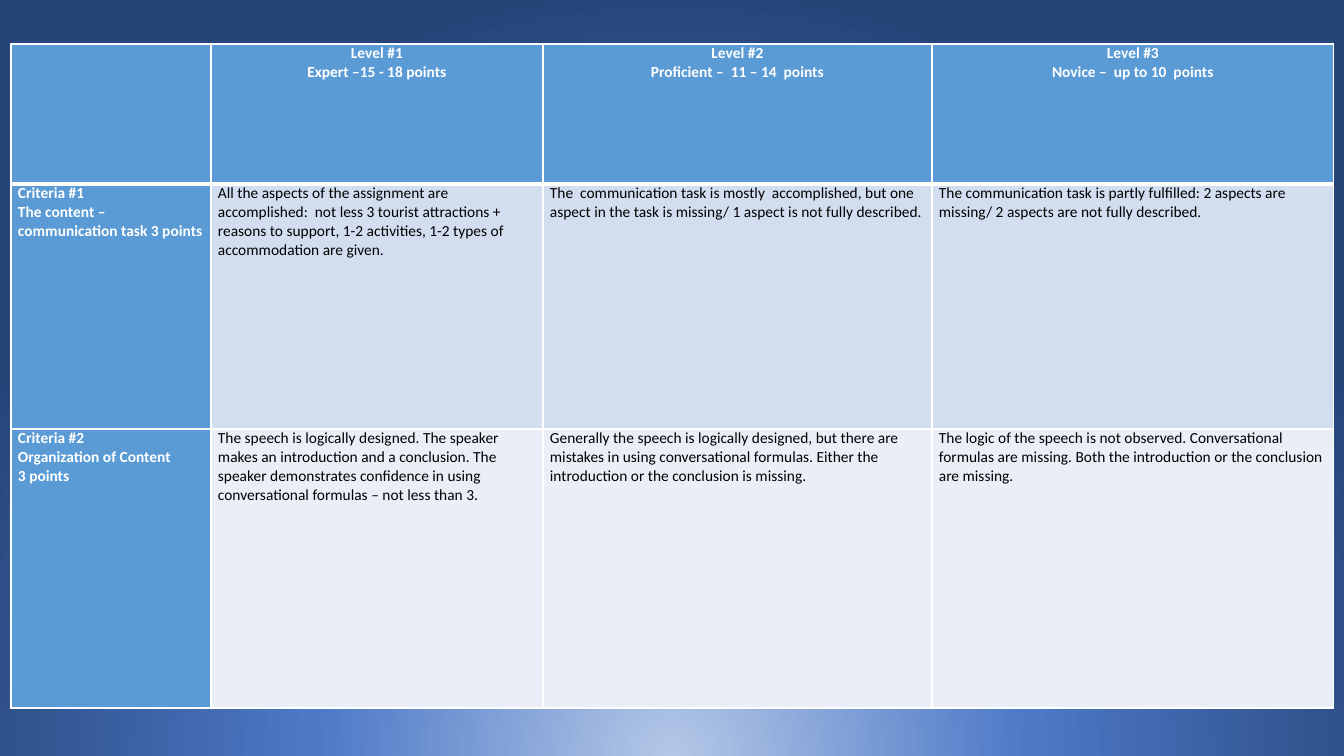
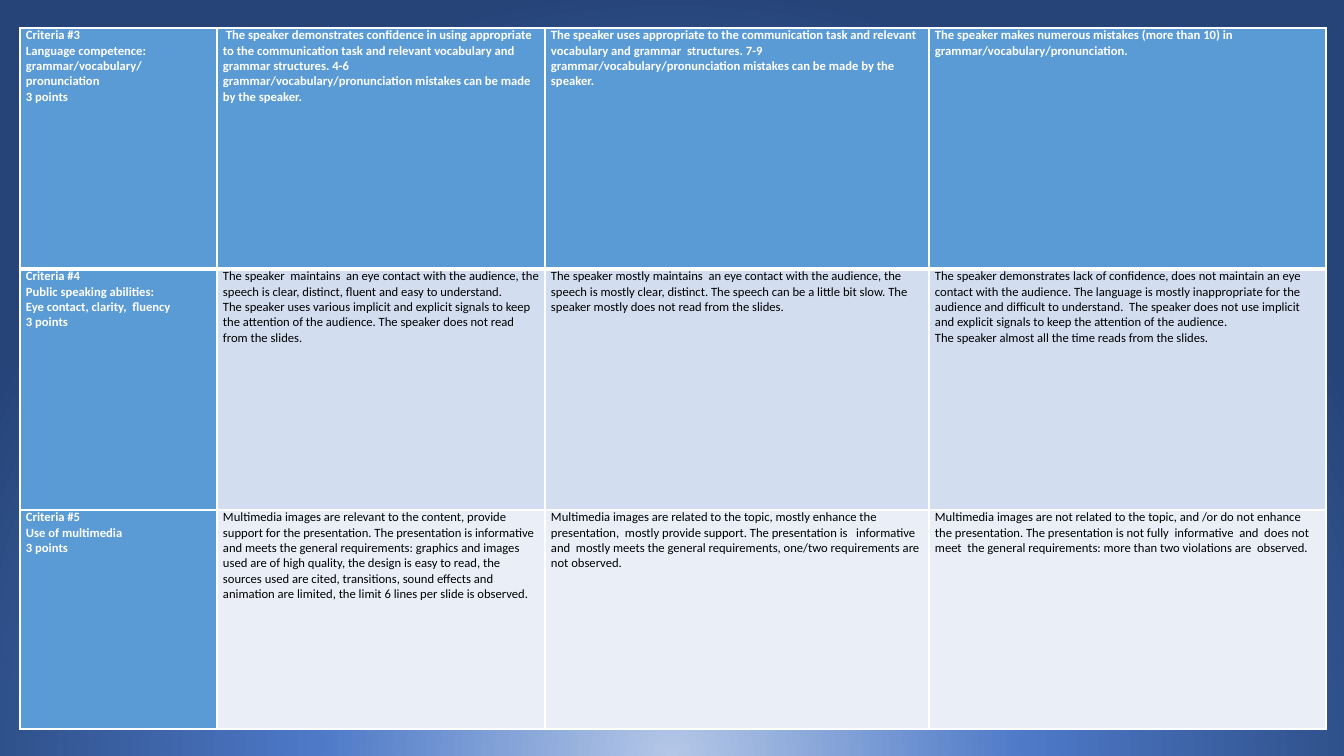
from dataclasses import dataclass

from lxml import etree
from pptx import Presentation
from pptx.dml.color import RGBColor
from pptx.enum.text import MSO_ANCHOR, PP_ALIGN
from pptx.oxml import parse_xml
from pptx.oxml.ns import nsdecls, qn
from pptx.util import Emu, Pt

SLIDE_WIDTH, SLIDE_HEIGHT = 1344, 756
EMU_PER_PX = 12192000 / SLIDE_WIDTH
FONT = "Calibri"
COLORS = {
    "glow": "B4C7E7",
    "royal": "4D79C7",
    "navy": "264478",
    "header": "5B9BD5",
    "band_dark": "D2DEEF",
    "band_light": "EAEFF7",
    "white": "FFFFFF",
    "black": "000000",
}
BACKDROP_STOPS = ((0, "glow"), (46, "royal"), (100, "navy"))
ROW_FILLS = ("header", "band_dark", "band_light")
THIN, THICK = 1, 3


@dataclass(frozen=True)
class Rubric:
    left: int
    top: int
    columns: tuple[int, ...]
    rows: tuple[int, ...]
    font_size: int
    side_margin: int
    header_align: PP_ALIGN
    texts: tuple[tuple[str, ...], ...]


RUBRICS = (
    Rubric(
        left=11, top=44,
        columns=(200, 332, 389, 402), rows=(140, 245, 279),
        font_size=11, side_margin=7, header_align=PP_ALIGN.CENTER,
        texts=(
            (
                "",
                "Level #1\nExpert –15 - 18 points",
                "Level #2\nProficient –  11 – 14  points",
                "Level #3\nNovice –  up to 10  points",
            ),
            (
                "Criteria #1\nThe content – communication task 3 points",
                "All the aspects of the assignment are accomplished:  not less 3 "
                "tourist attractions + reasons to support, 1-2 activities, 1-2 types "
                "of accommodation are given.",
                "The  communication task is mostly  accomplished, but one aspect in "
                "the task is missing/ 1 aspect is not fully described.",
                "The communication task is partly fulfilled: 2 aspects are missing/ "
                "2 aspects are not fully described.",
            ),
            (
                "Criteria #2\nOrganization of Content\n3 points",
                "The speech is logically designed. The speaker makes an introduction "
                "and a conclusion. The speaker demonstrates confidence in using "
                "conversational formulas – not less than 3.",
                "Generally the speech is logically designed, but there are  mistakes "
                "in using conversational formulas. Either the introduction or the "
                "conclusion is missing.",
                "The logic of the speech is not observed. Conversational formulas are "
                "missing. Both the introduction or the conclusion are missing.",
            ),
        ),
    ),
    Rubric(
        left=20, top=28,
        columns=(197, 328, 384, 397), rows=(241, 241, 219),
        font_size=9, side_margin=6, header_align=PP_ALIGN.LEFT,
        texts=(
            (
                "Criteria #3\nLanguage competence: grammar/vocabulary/ pronunciation\n"
                "3 points",
                " The speaker demonstrates confidence in using appropriate to the "
                "communication task and relevant vocabulary and grammar structures. "
                "4-6  grammar/vocabulary/pronunciation mistakes can be made by the "
                "speaker.",
                "The speaker uses appropriate to the communication task and relevant "
                "vocabulary and grammar  structures. 7-9 "
                "grammar/vocabulary/pronunciation mistakes can be made by the speaker.",
                "The speaker makes numerous mistakes (more than 10) in "
                "grammar/vocabulary/pronunciation.",
            ),
            (
                "Criteria #4\nPublic speaking abilities:\n"
                "Eye contact, clarity,  fluency\n3 points",
                "The speaker  maintains  an eye contact with the audience, the speech "
                "is clear, distinct, fluent and easy to understand.\n"
                "The speaker uses various implicit and explicit signals to keep the "
                "attention of the audience. The speaker does not read from the slides.",
                "The speaker mostly maintains  an eye contact with the audience, the "
                "speech is mostly clear, distinct. The speech can be a little bit slow. "
                "The speaker mostly does not read from the slides.",
                "The speaker demonstrates lack of confidence, does not maintain an eye "
                "contact with the audience. The language is mostly inappropriate for "
                "the audience and difficult to understand.  The speaker does not use "
                "implicit and explicit signals to keep the attention of the audience.\n"
                "The speaker almost all the time reads from the slides.",
            ),
            (
                "Criteria #5\nUse of multimedia\n3 points",
                "Multimedia images are relevant to the content, provide support for "
                "the presentation. The presentation is informative  and meets the "
                "general requirements: graphics and images used are of high quality, "
                "the design is easy to read, the sources used are cited, transitions, "
                "sound effects and animation are limited, the limit 6 lines per slide "
                "is observed.",
                "Multimedia images are related to the topic, mostly enhance the "
                "presentation,  mostly provide support. The presentation is   "
                "informative  and  mostly meets the general requirements, one/two "
                "requirements are not observed.",
                "Multimedia images are not related to the topic, and /or do not "
                "enhance the presentation. The presentation is not fully  informative  "
                "and  does not meet  the general requirements: more than two "
                "violations are  observed.",
            ),
        ),
    ),
)


def px(length: int) -> Emu:
    return Emu(round(length * EMU_PER_PX))


def rgb(name: str) -> RGBColor:
    return RGBColor.from_string(COLORS[name])


def paint_backdrop(master) -> None:
    """Give every slide the glow that rises from the bottom edge."""
    master.background.fill.solid()
    properties = master.element.find(".//" + qn("p:bgPr"))
    stops = "".join(
        f'<a:gs pos="{position * 1000}"><a:srgbClr val="{COLORS[name]}"/></a:gs>'
        for position, name in BACKDROP_STOPS
    )
    gradient = parse_xml(
        f'<a:gradFill {nsdecls("a")} rotWithShape="1"><a:gsLst>{stops}</a:gsLst>'
        '<a:path path="circle"><a:fillToRect l="50000" t="130000" r="50000" '
        'b="-30000"/></a:path></a:gradFill>'
    )
    properties.replace(properties.find(qn("a:solidFill")), gradient)


def write_text(frame, text: str, *, size: int, color: str, bold: bool,
               align: PP_ALIGN) -> None:
    for index, line in enumerate(text.split("\n")):
        para = frame.paragraphs[0] if index == 0 else frame.add_paragraph()
        para.alignment = align
        para.font.size = Pt(size)
        if not line:
            continue
        span = para.add_run()
        span.text = line
        span.font.name = FONT
        span.font.size = Pt(size)
        span.font.bold = bold
        span.font.color.rgb = rgb(color)


def set_borders(cell, *, top: int, bottom: int) -> None:
    properties = cell._tc.get_or_add_tcPr()
    widths = {"lnL": THIN, "lnR": THIN, "lnT": top, "lnB": bottom}
    for index, (side, width) in enumerate(widths.items()):
        line = etree.Element(qn(f"a:{side}"), w=str(Pt(width)))
        fill = etree.SubElement(line, qn("a:solidFill"))
        etree.SubElement(fill, qn("a:srgbClr"), val=COLORS["white"])
        properties.insert(index, line)


def draw_rubric(page, rubric: Rubric) -> None:
    table = page.shapes.add_table(
        len(rubric.rows), len(rubric.columns), px(rubric.left), px(rubric.top),
        px(sum(rubric.columns)), px(sum(rubric.rows)),
    ).table
    table.horz_banding = False
    for column, width in zip(table.columns, rubric.columns):
        column.width = px(width)
    for row, height in zip(table.rows, rubric.rows):
        row.height = px(height)

    for row_index, row_texts in enumerate(rubric.texts):
        for column_index, text in enumerate(row_texts):
            cell = table.cell(row_index, column_index)
            heading = row_index == 0 or column_index == 0
            cell.margin_left = cell.margin_right = px(rubric.side_margin)
            cell.margin_top = cell.margin_bottom = 0
            cell.vertical_anchor = MSO_ANCHOR.TOP
            cell.fill.solid()
            cell.fill.fore_color.rgb = rgb("header" if heading else ROW_FILLS[row_index])
            # The header row is parted from the body by a thick line
            set_borders(
                cell,
                top=THICK if row_index == 1 else THIN,
                bottom=THICK if row_index == 0 else THIN,
            )
            write_text(
                cell.text_frame, text, size=rubric.font_size,
                color="white" if heading else "black", bold=heading,
                align=rubric.header_align if row_index == 0 else PP_ALIGN.LEFT,
            )


def main() -> None:
    deck = Presentation()
    deck.slide_width, deck.slide_height = px(SLIDE_WIDTH), px(SLIDE_HEIGHT)
    paint_backdrop(deck.slide_master)
    blank = deck.slide_layouts[6]
    for rubric in RUBRICS:
        draw_rubric(deck.slides.add_slide(blank), rubric)
    deck.save("out.pptx")


if __name__ == "__main__":
    main()
